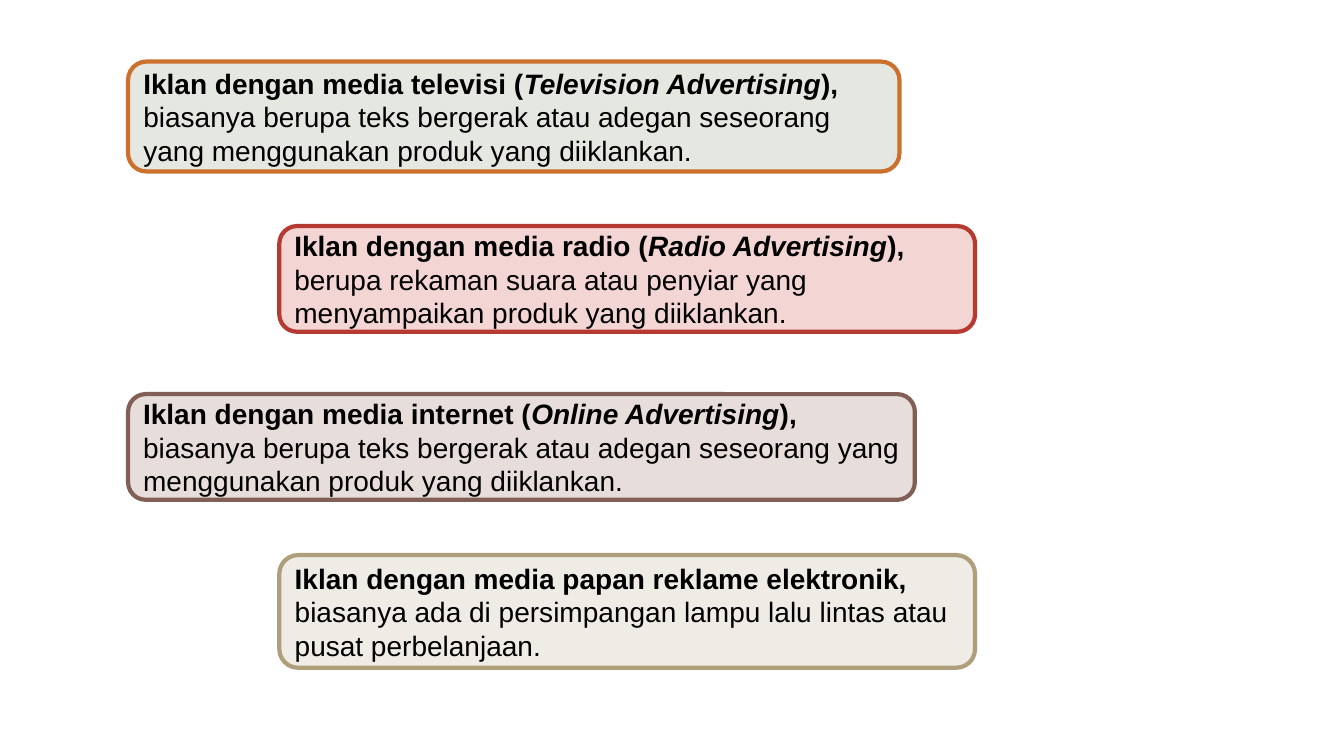
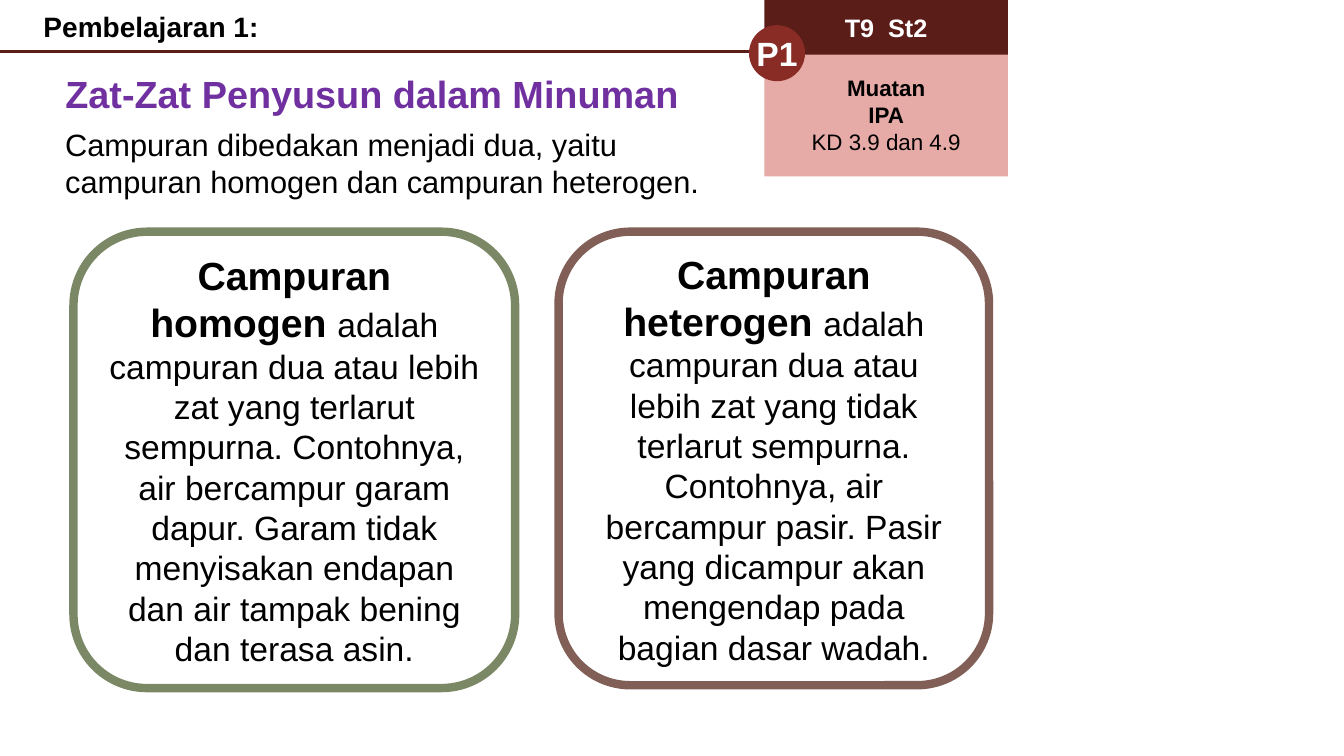
from dataclasses import dataclass

from lxml import etree
from pptx import Presentation
from pptx.dml.color import RGBColor
from pptx.enum.shapes import MSO_CONNECTOR, MSO_SHAPE
from pptx.enum.text import MSO_ANCHOR, MSO_AUTO_SIZE, PP_ALIGN
from pptx.oxml.ns import qn
from pptx.util import Pt

ROUNDED, RECTANGLE, OVAL = (
    MSO_SHAPE.ROUNDED_RECTANGLE, MSO_SHAPE.RECTANGLE, MSO_SHAPE.OVAL)
LEFT, CENTER = PP_ALIGN.LEFT, PP_ALIGN.CENTER
TOP, MIDDLE = MSO_ANCHOR.TOP, MSO_ANCHOR.MIDDLE
TITLE_ONLY, BLANK = 5, 6


@dataclass(frozen=True)
class Theme:
    font: str = "Arial"
    black: str = "000000"
    white: str = "FFFFFF"
    purple: str = "7030A0"
    maroon: str = "5A1D18"
    brick: str = "882C25"
    pink: str = "E7ABA7"
    orange: str = "CC702D"
    red: str = "B53A31"
    brown: str = "815F56"
    sand: str = "AE9E7C"
    olive: str = "7B8865"
    pale_olive: str = "E5E8E0"
    pale_red: str = "F3D5D3"
    pale_brown: str = "E7DEDC"
    pale_sand: str = "EFECE5"
    title_size: int = 27
    term_size: int = 28
    definition_size: int = 24
    badge_size: int = 24
    intro_size: int = 22
    body_size: int = 20
    tag_size: int = 18
    subject_size: int = 16


THEME = Theme()
BOLD = {"bold": True}
BOLD_ITALIC = {"bold": True, "italic": True}
TERM = {"bold": True, "size": Pt(THEME.term_size)}


def add_box(slide, kind, bounds, fill, line=None, line_width=0):
    shape = slide.shapes.add_shape(kind, *map(Pt, bounds))
    shape.shadow.inherit = False
    shape.fill.solid()
    shape.fill.fore_color.rgb = RGBColor.from_string(fill)
    if line:
        shape.line.color.rgb = RGBColor.from_string(line)
        shape.line.width = Pt(line_width)
    else:
        shape.line.fill.background()
    return shape


def write(shape, paragraphs, size, colour=THEME.black, bold=False,
          alignment=LEFT, anchor=MIDDLE, wrap=True):
    """Fill a shape with paragraphs, each a list of (text, font options) runs."""
    frame = shape.text_frame
    frame.auto_size = MSO_AUTO_SIZE.NONE
    frame.word_wrap = wrap
    frame.vertical_anchor = anchor
    for index, runs in enumerate(paragraphs):
        paragraph = frame.add_paragraph() if index else frame.paragraphs[0]
        paragraph.alignment = alignment
        paragraph.font.name = THEME.font
        paragraph.font.size = Pt(size)
        paragraph.font.bold = bold
        paragraph.font.color.rgb = RGBColor.from_string(colour)
        for text, options in runs:
            run = paragraph.add_run()
            run.text = text
            for option, value in options.items():
                setattr(run.font, option, value)


presentation = Presentation()
presentation.slide_width, presentation.slide_height = Pt(960), Pt(540)

# Slide 1: kinds of electronic advertising, in staggered boxes
slide = presentation.slides.add_slide(presentation.slide_layouts[BLANK])
MOVING_TEXT = ("biasanya berupa teks bergerak atau adegan seseorang "
               "yang menggunakan produk yang diiklankan.")
COLUMNS = (91.5, 199.5)
media = [
    (44, 551, 78.5, THEME.pale_olive, THEME.orange,
     "televisi", "Television Advertising", MOVING_TEXT),
    (161.5, 497, 75.5, THEME.pale_red, THEME.red,
     "radio", "Radio Advertising",
     "berupa rekaman suara atau penyiar yang menyampaikan produk yang diiklankan."),
    (281.5, 562, 75.5, THEME.pale_brown, THEME.brown,
     "internet", "Online Advertising", MOVING_TEXT),
    (396.5, 497, 80.5, THEME.pale_sand, THEME.sand,
     "papan reklame elektronik", None,
     "biasanya ada di persimpangan lampu lalu lintas atau pusat perbelanjaan."),
]
for index, (top, width, height, fill, line, medium, english, text) in enumerate(media):
    heading = f"Iklan dengan media {medium}"
    if english:
        runs = [(f"{heading} (", BOLD), (english, BOLD_ITALIC), ("), ", BOLD)]
    else:
        runs = [(f"{heading}, ", BOLD)]
    box = add_box(slide, ROUNDED, (COLUMNS[index % 2], top, width, height), fill, line, 3)
    write(box, [runs + [(text, {})]], THEME.body_size)

# Slide 2: homogeneous and heterogeneous mixtures
slide = presentation.slides.add_slide(presentation.slide_layouts[TITLE_ONLY])
title = slide.shapes.title
title.left, title.top, title.width, title.height = map(Pt, (39.5, 47, 530.5, 40))
write(title, [[("Zat-Zat Penyusun dalam Minuman", {})]], THEME.title_size,
      THEME.purple, bold=True, anchor=TOP)

rule = slide.shapes.add_connector(
    MSO_CONNECTOR.STRAIGHT, Pt(0), Pt(36.75), Pt(720), Pt(36.75))
rule.line.color.rgb = RGBColor.from_string(THEME.maroon)
rule.line.width = Pt(2.25)
etree.SubElement(rule._element.spPr, qn("a:effectLst"))

subject = add_box(slide, RECTANGLE, (546, 38, 174, 88), THEME.pink)
write(subject, [[("Muatan", BOLD)], [("IPA", BOLD)], [("KD 3.9 dan 4.9", {})]],
      THEME.subject_size, alignment=CENTER)
tag = add_box(slide, RECTANGLE, (546, 0, 174, 39), THEME.maroon)
write(tag, [[("T9  St2", {})]], THEME.tag_size, THEME.white, bold=True, alignment=CENTER)
badge = add_box(slide, OVAL, (535, 18, 40, 40), THEME.brick)
write(badge, [[("P1", {})]], THEME.badge_size, THEME.white, bold=True,
      alignment=CENTER, wrap=False)

labels = [
    ((24, 3.5, 169, 32), "Pembelajaran 1:", THEME.body_size, True),
    ((39.5, 86.5, 506, 60.5),
     "Campuran dibedakan menjadi dua, yaitu campuran homogen dan campuran heterogen.",
     THEME.intro_size, False),
]
for bounds, text, size, bold in labels:
    label = slide.shapes.add_textbox(*map(Pt, bounds))
    write(label, [[(text, {})]], size, bold=bold, anchor=TOP)

mixtures = [
    ((52.5, 165.5, 315.5, 326), THEME.olive, "homogen",
     "adalah campuran dua atau lebih zat yang terlarut sempurna. Contohnya, air "
     "bercampur garam dapur. Garam tidak menyisakan endapan dan air tampak bening "
     "dan terasa asin."),
    ((399, 165.5, 307.5, 324), THEME.brown, "heterogen",
     "adalah campuran dua atau lebih zat yang tidak terlarut sempurna. Contohnya, "
     "air bercampur pasir. Pasir yang dicampur akan mengendap pada bagian dasar wadah."),
]
for bounds, line, name, definition in mixtures:
    card = add_box(slide, ROUNDED, bounds, THEME.white, line, 6)
    write(card, [[(f"Campuran {name} ", TERM), (definition, {})]],
          THEME.definition_size, alignment=CENTER)

presentation.save("out.pptx")
